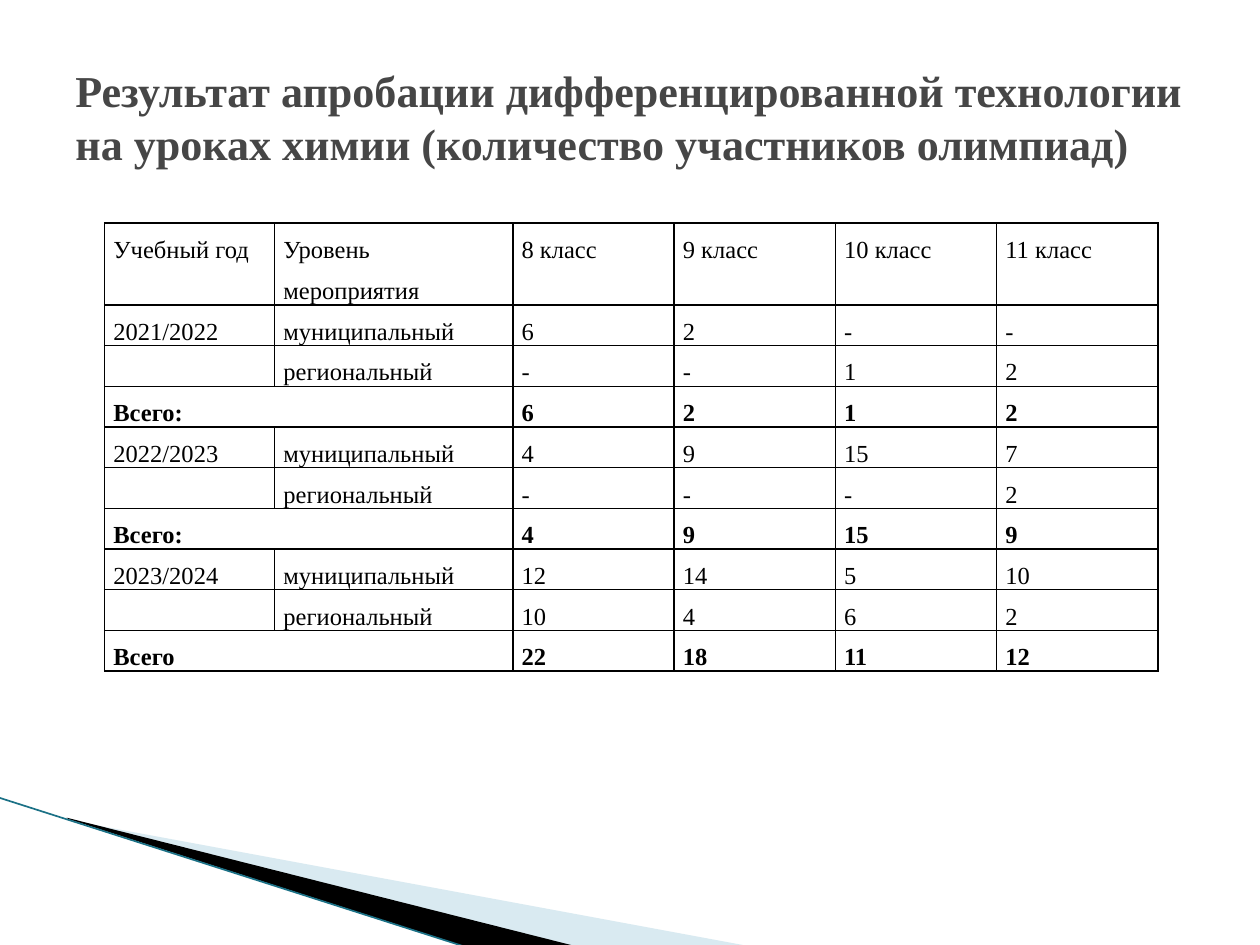
"""Build a slide with a table of olympiad participants by school year."""
from dataclasses import dataclass

from pptx import Presentation as Deck
from pptx.dml.color import RGBColor as Rgb
from pptx.enum.shapes import MSO_CONNECTOR as Link
from pptx.enum.text import MSO_ANCHOR as Anchor, PP_ALIGN as Align
from pptx.oxml import parse_xml
from pptx.oxml.ns import nsdecls, qn
from pptx.util import Inches, Pt


@dataclass(frozen=True)
class Theme:
    font: str = "Times New Roman"
    title: float = 25.2
    body: float = 14
    rule: float = 1
    edge: float = 0.95
    grey: str = "464646"
    black: str = "000000"
    pale: str = "A0CBDC"
    teal: str = "1B7186"


@dataclass(frozen=True)
class Wedge:
    points: tuple
    color: str
    alpha: int = 100


@dataclass(frozen=True)
class Year:
    name: str
    city: tuple
    region: tuple
    total: str
    sums: tuple


THEME = Theme()
WEDGES = (
    Wedge(((0.55, 6.51), (5.95, 7.51), (4.56, 7.51), (0.55, 6.5)), THEME.pale, 40),
    Wedge(((0.53, 6.49), (4.57, 7.51), (3.72, 7.52), (0.54, 6.5)), THEME.black),
)
HEAD = ("Учебный год", "Уровень мероприятия",
        "8 класс", "9 класс", "10 класс", "11 класс")
YEARS = (
    Year("2021/2022", ("6", "2", "-", "-"), ("-", "-", "1", "2"),
         "Всего:", ("6", "2", "1", "2")),
    Year("2022/2023", ("4", "9", "15", "7"), ("-", "-", "-", "2"),
         "Всего:", ("4", "9", "15", "9")),
    Year("2023/2024", ("12", "14", "5", "10"), ("10", "4", "6", "2"),
         "Всего", ("22", "18", "11", "12")),
)
WIDTHS = (1.35, 1.89) + (1.28,) * 4
TOP_ROW, ROW = 0.65, 0.32


def put_text(frame, text: str, *, size: float, color: str, bold: bool = False,
             align=Align.LEFT, space: float = 1) -> None:
    para = frame.paragraphs[0]
    para.alignment = align
    para.line_spacing = space
    run = para.add_run()
    run.text = text
    font = run.font
    font.name, font.size, font.bold = THEME.font, Pt(size), bold
    font.color.rgb = Rgb.from_string(color)


def draw_wedge(slide, wedge: Wedge) -> None:
    first, *rest = [(Inches(x), Inches(y)) for x, y in wedge.points]
    form = slide.shapes.build_freeform(*first)
    form.add_line_segments(rest, close=True)
    shape = form.convert_to_shape()
    shape.shadow.inherit = False
    shape.line.fill.background()
    shape.fill.solid()
    shape.fill.fore_color.rgb = Rgb.from_string(wedge.color)
    if wedge.alpha < 100:
        tint = shape.element.spPr.find(".//" + qn("a:srgbClr"))
        tint.append(parse_xml(f'<a:alpha {nsdecls("a")} val="{wedge.alpha * 1000}"/>'))


def draw_edge(slide) -> None:
    line = slide.shapes.add_connector(
        Link.STRAIGHT, Inches(-0.01), Inches(6.33), Inches(3.71), Inches(7.52))
    line.line.color.rgb = Rgb.from_string(THEME.teal)
    line.line.width = Pt(THEME.edge)
    line.element.spPr.append(parse_xml(f'<a:effectLst {nsdecls("a")}/>'))


def draw_title(slide, text: str) -> None:
    box = slide.shapes.add_textbox(Inches(0.5), Inches(0.3), Inches(9), Inches(1.25))
    frame = box.text_frame
    frame.word_wrap = True
    frame.vertical_anchor = Anchor.MIDDLE
    put_text(frame, text, size=THEME.title, color=THEME.grey, bold=True)


def style_cell(cell) -> None:
    cell.margin_left = cell.margin_right = Inches(0.07)
    cell.margin_top = cell.margin_bottom = 0
    props = cell._tc.get_or_add_tcPr()
    for side in ("lnL", "lnR", "lnT", "lnB"):
        props.append(parse_xml(
            f'<a:{side} {nsdecls("a")} w="{Pt(THEME.rule)}"><a:solidFill>'
            f'<a:srgbClr val="{THEME.black}"/></a:solidFill></a:{side}>'))
    cell.fill.background()


def list_rows() -> list:
    rows = [(HEAD, False)]
    for year in YEARS:
        rows += [((year.name, "муниципальный") + year.city, False),
                 (("", "региональный") + year.region, False),
                 ((year.total, "") + year.sums, True)]
    return rows


def draw_table(slide) -> None:
    rows = list_rows()
    high = TOP_ROW + ROW * (len(rows) - 1)
    table = slide.shapes.add_table(
        len(rows), len(WIDTHS), Inches(0.83), Inches(1.77),
        Inches(sum(WIDTHS)), Inches(high)).table
    table.first_row = table.horz_banding = False
    for col, width in zip(table.columns, WIDTHS):
        col.width = Inches(width)
    for i, (texts, total) in enumerate(rows):
        table.rows[i].height = Inches(ROW if i else TOP_ROW)
        for j, text in enumerate(texts):
            cell = table.cell(i, j)
            style_cell(cell)
            if text:
                put_text(cell.text_frame, text, size=THEME.body, color=THEME.black,
                         bold=total, align=Align.JUSTIFY, space=1.5)
        if total:
            table.cell(i, 0).merge(table.cell(i, 1))


def main() -> None:
    deck = Deck()
    deck.slide_width, deck.slide_height = Inches(10), Inches(7.5)
    slide = deck.slides.add_slide(deck.slide_layouts[6])
    for wedge in WEDGES:
        draw_wedge(slide, wedge)
    draw_edge(slide)
    draw_table(slide)
    draw_title(slide, "Результат апробации дифференцированной технологии "
                      "на уроках химии (количество участников олимпиад)")
    deck.save("out.pptx")


if __name__ == "__main__":
    main()
